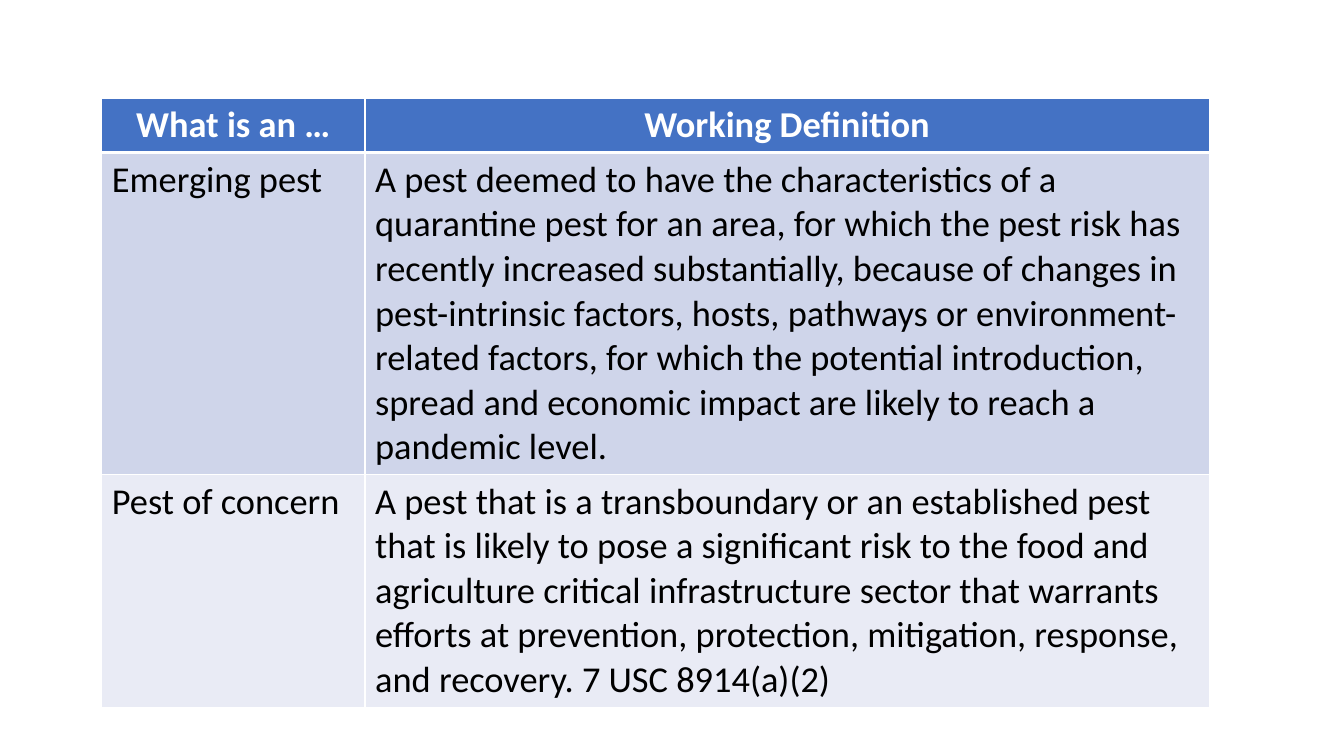
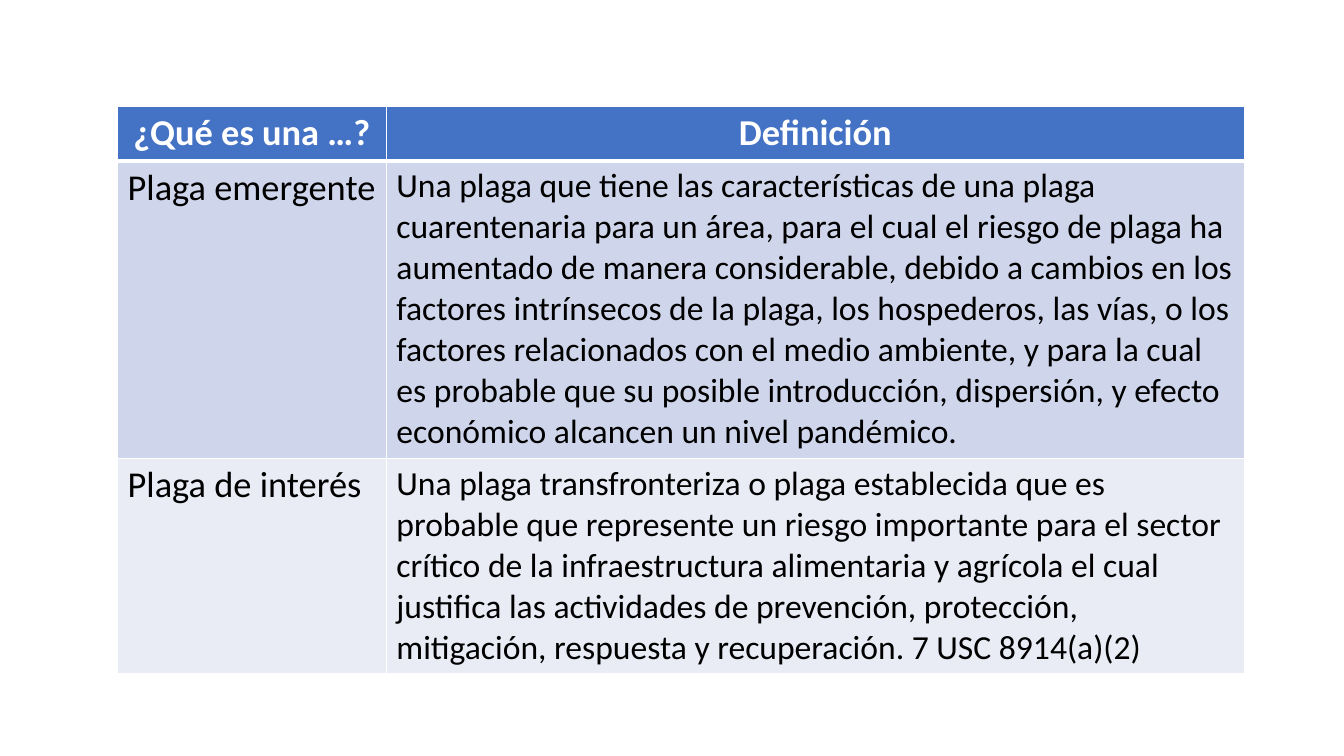
from lxml.etree import SubElement
from pptx import Presentation
from pptx.dml.color import RGBColor
from pptx.enum.text import PP_ALIGN as Align
from pptx.oxml.ns import qn
from pptx.util import Pt

FONT = "Calibri"
WHITE, BLACK = "FFFFFF", "000000"
HEADER_FILL = "4472C4"
BAND_FILLS = ["CFD5EA", "E9EBF5"]
TERM_SIZE = 26
THIN, THICK = 1, 3

ENGLISH = [
    ("What is an …", "Working Definition"),
    ("Emerging pest",
     "A pest deemed to have the characteristics of a quarantine pest for an area, "
     "for which the pest risk has recently increased substantially, because of "
     "changes in pest-intrinsic factors, hosts, pathways or environment-related "
     "factors, for which the potential introduction, spread and economic impact "
     "are likely to reach a pandemic level."),
    ("Pest of concern",
     "A pest that is a transboundary or an established pest that is likely to pose "
     "a significant risk to the food and agriculture critical infrastructure sector "
     "that warrants efforts at prevention, protection, mitigation, response, and "
     "recovery. 7 USC 8914(a)(2)"),
]
SPANISH = [
    ("¿Qué es una …?", "Definición"),
    ("Plaga emergente",
     "Una plaga que tiene las características de una plaga cuarentenaria para un "
     "área, para el cual el riesgo de plaga ha aumentado de manera considerable, "
     "debido a cambios en los factores intrínsecos de la plaga, los hospederos, las "
     "vías, o los factores relacionados con el medio ambiente, y para la cual es "
     "probable que su posible introducción, dispersión, y efecto económico alcancen "
     "un nivel pandémico."),
    ("Plaga de interés",
     "Una plaga transfronteriza o plaga establecida que es probable que represente "
     "un riesgo importante para el sector crítico de la infraestructura alimentaria "
     "y agrícola el cual justifica las actividades de prevención, protección, "
     "mitigación, respuesta y recuperación. 7 USC 8914(a)(2)"),
]


def color(value):
    return RGBColor.from_string(value)


def set_borders(cell, top, bottom):
    properties = cell._tc.get_or_add_tcPr()
    for side, width in (("L", THIN), ("R", THIN), ("T", top), ("B", bottom)):
        line = SubElement(properties, qn(f"a:ln{side}"), w=str(Pt(width)))
        fill = SubElement(line, qn("a:solidFill"))
        SubElement(fill, qn("a:srgbClr"), val=WHITE)


def fill_cell(cell, text, size, row):
    is_header = row == 0
    set_borders(cell, THICK if row == 1 else THIN, THICK if is_header else THIN)
    cell.fill.solid()
    cell.fill.fore_color.rgb = color(HEADER_FILL if is_header else BAND_FILLS[(row - 1) % 2])
    para = cell.text_frame.paragraphs[0]
    para.alignment = Align.CENTER if is_header else Align.LEFT
    span = para.add_run()
    span.text = text
    span.font.name = FONT
    span.font.size = Pt(size)
    span.font.bold = is_header
    span.font.color.rgb = color(WHITE if is_header else BLACK)


def add_definitions(deck, rows, left, top, widths, heights, definition_size):
    page = deck.slides.add_slide(deck.slide_layouts[6])
    table = page.shapes.add_table(
        len(rows), len(widths), Pt(left), Pt(top), Pt(sum(widths)), Pt(sum(heights))
    ).table
    for column, width in zip(table.columns, widths):
        column.width = Pt(width)
    for index, (texts, height) in enumerate(zip(rows, heights)):
        table.rows[index].height = Pt(height)
        sizes = (TERM_SIZE, definition_size if index else TERM_SIZE)
        for column, (text, size) in enumerate(zip(texts, sizes)):
            fill_cell(table.cell(index, column), text, size, index)


def main():
    deck = Presentation()
    deck.slide_width, deck.slide_height = Pt(960), Pt(540)
    add_definitions(deck, ENGLISH, 72.75, 70, (188, 603.25), (38.5, 229, 166), TERM_SIZE)
    add_definitions(deck, SPANISH, 84, 75.75, (192, 613), (38.5, 212.5, 153), 24)
    deck.save("out.pptx")


if __name__ == "__main__":
    main()
